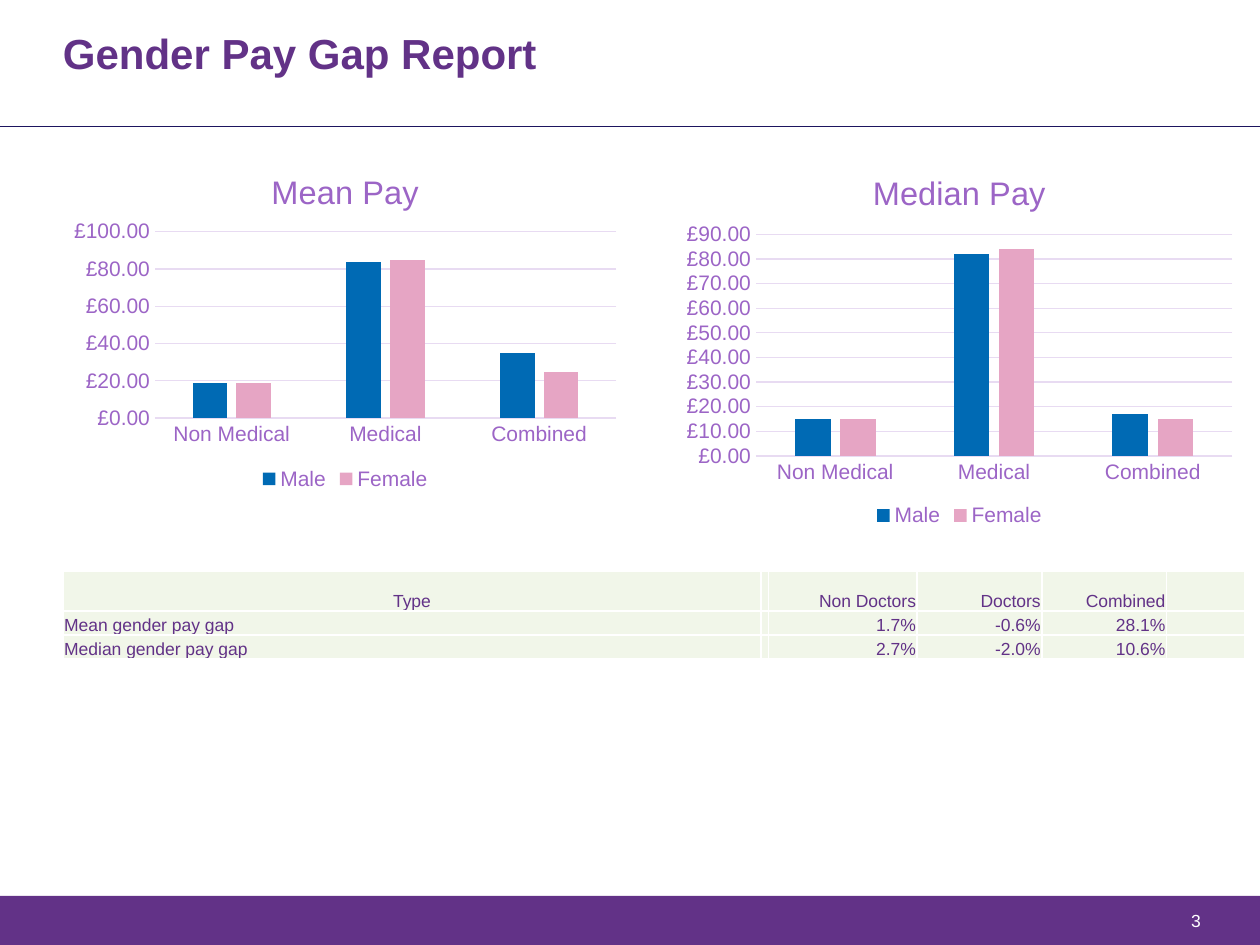
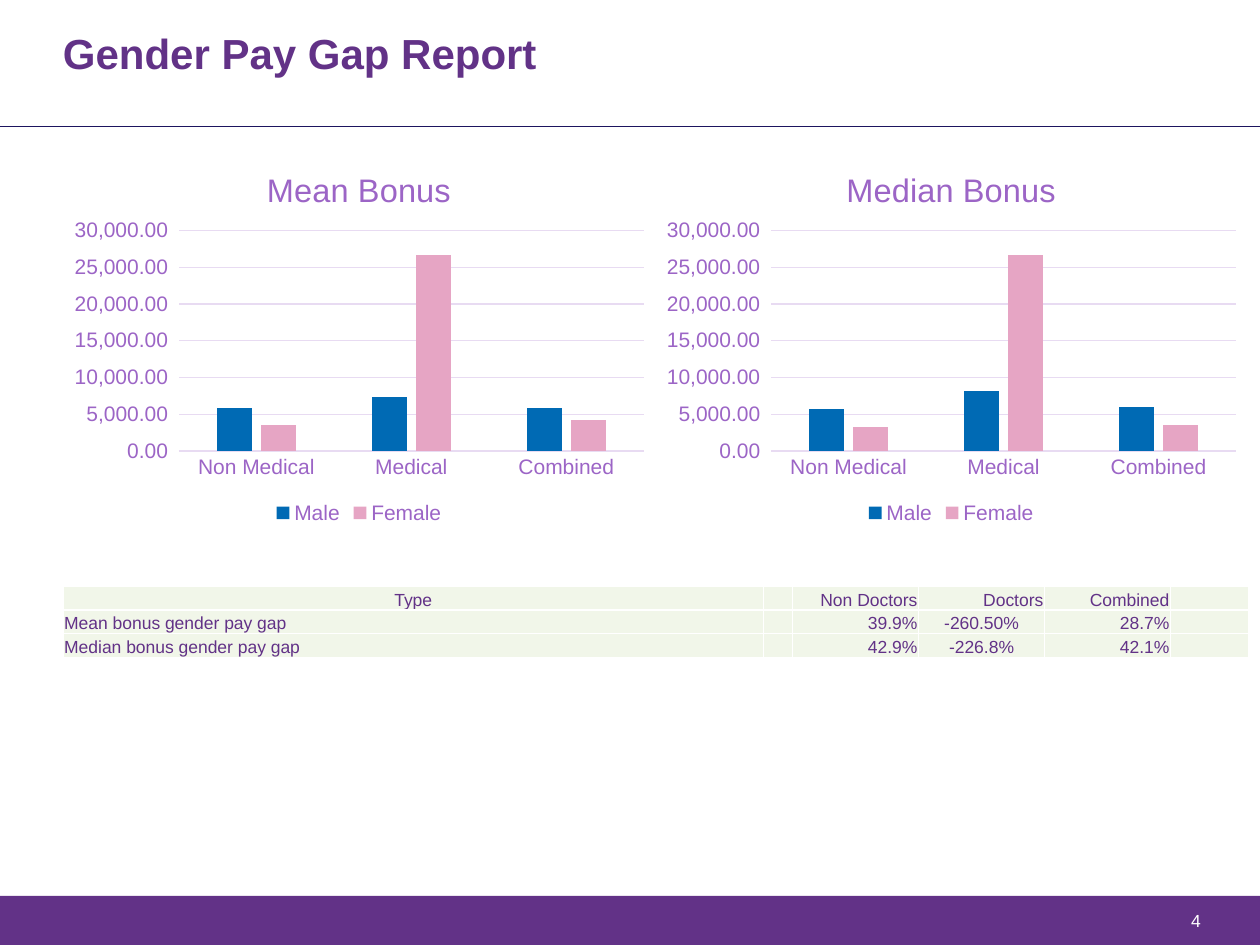
from lxml import etree
from pptx import Presentation
from pptx.chart.data import CategoryChartData
from pptx.dml.color import RGBColor
from pptx.enum.chart import XL_CHART_TYPE, XL_LEGEND_POSITION, XL_TICK_MARK
from pptx.enum.shapes import MSO_CONNECTOR, MSO_SHAPE
from pptx.enum.text import MSO_ANCHOR, PP_ALIGN
from pptx.oxml.ns import qn
from pptx.util import Inches, Pt

PURPLE = RGBColor(0x62, 0x32, 0x87)
LILAC = RGBColor(0x9C, 0x65, 0xC6)
PALE_LILAC = RGBColor(0xE8, 0xDB, 0xF2)
NAVY = RGBColor(0x1D, 0x15, 0x5F)
BLUE = RGBColor(0x00, 0x6A, 0xB4)
PINK = RGBColor(0xE6, 0xA5, 0xC4)
PALE_GREEN = RGBColor(0xF1, 0xF6, 0xE9)
WHITE = RGBColor(0xFF, 0xFF, 0xFF)

LEFT, CENTER, RIGHT = PP_ALIGN.LEFT, PP_ALIGN.CENTER, PP_ALIGN.RIGHT
COLUMN_CLUSTERED = XL_CHART_TYPE.COLUMN_CLUSTERED
BOTTOM_LEGEND = XL_LEGEND_POSITION.BOTTOM
NO_TICK = XL_TICK_MARK.NONE

FONT = "Arial"
CATEGORIES = ["Non Medical", "Medical", "Combined"]
SERIES_COLORS = {"Male": BLUE, "Female": PINK}
HEADER = ["Type", "", "Non Doctors", "Doctors", "Combined", ""]
POUNDS = '"£"#,##0.00;[Red]"£"#,##0.00'
AMOUNT = r"#,##0.00\ ;[Red]\(#,##0.00\)"

SLIDES = [
    {
        "number": 3,
        "charts": [
            {"title": "Mean Pay", "box": (0.5, 1.2, 4.48, 2.73), "plot": (1.23, 1.84, 3.66, 1.48),
             "top": 100, "step": 20, "number_format": POUNDS,
             "values": {"Male": [19, 84, 35], "Female": [19, 85, 25]}},
            {"title": "Median Pay", "box": (5.36, 1.2, 4.51, 3.02), "plot": (6, 1.86, 3.78, 1.76),
             "top": 90, "step": 10, "number_format": POUNDS,
             "values": {"Male": [15, 82, 17], "Female": [15, 84, 15]}},
        ],
        "table": {
            "top": 4.53, "widths": [5.54, 0.04, 1.18, 0.99, 0.99, 0.62], "heights": [0.32, 0.19, 0.19],
            "rows": [["Mean gender pay gap", "", "1.7%", "-0.6%", "28.1%", ""],
                     ["Median gender pay gap", "", "2.7%", "-2.0%", "10.6%", ""]],
            "doctors_alignment": RIGHT},
    },
    {
        "number": 4,
        "charts": [
            {"title": "Mean Bonus", "box": (0.5, 1.18, 4.7, 3.02), "plot": (1.42, 1.83, 3.69, 1.75),
             "top": 30000, "step": 5000, "number_format": AMOUNT,
             "values": {"Male": [5800, 7400, 5900], "Female": [3500, 26600, 4200]}},
            {"title": "Median Bonus", "box": (5.2, 1.18, 4.7, 3.02), "plot": (6.12, 1.83, 3.69, 1.75),
             "top": 30000, "step": 5000, "number_format": AMOUNT,
             "values": {"Male": [5700, 8100, 6000], "Female": [3200, 26600, 3500]}},
        ],
        "table": {
            "top": 4.65, "widths": [5.56, 0.23, 1, 1, 1, 0.62], "heights": [0.19] * 3,
            "rows": [["Mean bonus gender pay gap", "", "39.9%", "-260.50%", "28.7%", ""],
                     ["Median bonus gender pay gap", "", "42.9%", "-226.8%", "42.1%", ""]],
            "doctors_alignment": CENTER},
    },
]


def set_attributes(target, **values):
    for name, value in values.items():
        setattr(target, name, value)


def set_font(font, size, color, bold=False):
    set_attributes(font, name=FONT, size=Pt(size), bold=bold)
    font.color.rgb = color


def set_line(line, color, width):
    line.color.rgb = color
    line.width = Pt(width)


def inches(box):
    return [Inches(length) for length in box]


class ReportDeck:
    def __init__(self):
        self.presentation = Presentation()
        set_attributes(self.presentation, slide_width=Inches(10), slide_height=Inches(7.5))
        self.slide = None

    def add_slide(self, number):
        self.slide = self.presentation.slides.add_slide(self.presentation.slide_layouts[6])
        self.band((0, 7.11, 10, 0.39), PURPLE)
        self.rule((0, 1, 10, 1), NAVY, 0.25)
        self.text((9.26, 7.22, 0.27, 0.23), str(number), 10, WHITE, alignment=RIGHT)
        self.text((0.5, 0.26, 3.93, 0.34), "Gender Pay Gap Report", 24, PURPLE, bold=True,
                  line_spacing=0.9)

    def band(self, box, color):
        shape = self.slide.shapes.add_shape(MSO_SHAPE.RECTANGLE, *inches(box))
        shape.shadow.inherit = False
        shape.fill.solid()
        shape.fill.fore_color.rgb = color
        shape.line.fill.background()

    def rule(self, ends, color, width):
        connector = self.slide.shapes.add_connector(MSO_CONNECTOR.STRAIGHT, *inches(ends))
        set_line(connector.line, color, width)
        etree.SubElement(connector._element.spPr, qn("a:effectLst"))

    def text(self, box, text, size, color, bold=False, **paragraph_format):
        frame = self.slide.shapes.add_textbox(*inches(box)).text_frame
        set_attributes(frame, word_wrap=True, margin_left=0, margin_right=0,
                       margin_top=0, margin_bottom=0)
        paragraph = frame.paragraphs[0]
        set_attributes(paragraph, **paragraph_format)
        run = paragraph.add_run()
        run.text = text
        set_font(run.font, size, color, bold)

    def chart(self, title, box, plot, top, step, number_format, values):
        data = CategoryChartData()
        data.categories = CATEGORIES
        for name, amounts in values.items():
            data.add_series(name, amounts)
        frame = self.slide.shapes.add_chart(COLUMN_CLUSTERED, *inches(box), data)
        chart = frame.chart
        set_font(chart.font, 10, PURPLE)

        # Title and legend
        chart.has_title = True
        chart.chart_title.include_in_layout = False
        run = chart.chart_title.text_frame.paragraphs[0].add_run()
        run.text = title
        set_font(run.font, 18.6, LILAC)
        chart.has_legend = True
        set_attributes(chart.legend, position=BOTTOM_LEGEND, include_in_layout=False)
        set_font(chart.legend.font, 12, LILAC)

        # Axes
        for axis in (chart.category_axis, chart.value_axis):
            set_attributes(axis, major_tick_mark=NO_TICK, minor_tick_mark=NO_TICK)
            set_font(axis.tick_labels.font, 12, LILAC)
        set_line(chart.category_axis.format.line, PALE_LILAC, 0.75)
        axis = chart.value_axis
        set_attributes(axis, minimum_scale=0, maximum_scale=top, major_unit=step,
                       has_major_gridlines=True)
        set_attributes(axis.tick_labels, number_format=number_format,
                       number_format_is_linked=False)
        axis.format.line.fill.background()
        set_line(axis.major_gridlines.format.line, PALE_LILAC, 0.75)

        # Columns
        set_attributes(chart.plots[0], gap_width=219, overlap=-27, vary_by_categories=False)
        for series in chart.plots[0].series:
            series.format.fill.solid()
            series.format.fill.fore_color.rgb = SERIES_COLORS[series.name]
        self.place_plot(chart, box, plot)

    def place_plot(self, chart, box, plot):
        area = chart._chartSpace.chart.plotArea
        for layout in area.findall(qn("c:layout")):
            area.remove(layout)
        layout = etree.Element(qn("c:layout"))
        area.insert(0, layout)
        manual = etree.SubElement(layout, qn("c:manualLayout"))
        left, top, width, height = box
        settings = {
            "layoutTarget": "inner", "xMode": "edge", "yMode": "edge",
            "x": (plot[0] - left) / width, "y": (plot[1] - top) / height,
            "w": plot[2] / width, "h": plot[3] / height}
        for name, value in settings.items():
            etree.SubElement(manual, qn(f"c:{name}")).set("val", str(value))

    def table(self, top, widths, heights, rows, doctors_alignment):
        frame = self.slide.shapes.add_table(
            len(heights), len(widths),
            *inches((0.5, top, sum(widths), sum(heights))))
        table = frame.table
        set_attributes(table, first_row=False, horz_banding=False)
        for column, width in zip(table.columns, widths):
            column.width = Inches(width)
        for row, height in zip(table.rows, heights):
            row.height = Inches(height)
        header_alignments = [CENTER, LEFT, RIGHT, RIGHT, RIGHT, LEFT]
        body_alignments = [LEFT, LEFT, RIGHT, doctors_alignment, RIGHT, LEFT]
        for row_index, texts in enumerate([HEADER] + rows):
            alignments = body_alignments if row_index else header_alignments
            for column_index, text in enumerate(texts):
                self.cell(table.cell(row_index, column_index), text, alignments[column_index])

    def cell(self, cell, text, alignment):
        set_attributes(cell, vertical_anchor=MSO_ANCHOR.BOTTOM, margin_left=Inches(0.01),
                       margin_right=Inches(0.01), margin_top=Inches(0.01), margin_bottom=0)
        paragraph = cell.text_frame.paragraphs[0]
        paragraph.alignment = alignment
        if text:
            run = paragraph.add_run()
            run.text = text
            set_font(run.font, 10, PURPLE)
        else:
            # Keeps an empty cell from stretching its row
            etree.SubElement(paragraph._p, qn("a:endParaRPr")).set("sz", "1000")
        properties = cell._tc.get_or_add_tcPr()
        for side in ("lnL", "lnR", "lnT", "lnB"):
            border = etree.SubElement(properties, qn(f"a:{side}"), w=str(Pt(1)))
            fill = etree.SubElement(border, qn("a:solidFill"))
            etree.SubElement(fill, qn("a:srgbClr"), val=str(WHITE))
        cell.fill.solid()
        cell.fill.fore_color.rgb = PALE_GREEN


def main():
    deck = ReportDeck()
    for content in SLIDES:
        deck.add_slide(content["number"])
        for chart in content["charts"]:
            deck.chart(**chart)
        deck.table(**content["table"])
    deck.presentation.save("out.pptx")


if __name__ == "__main__":
    main()
